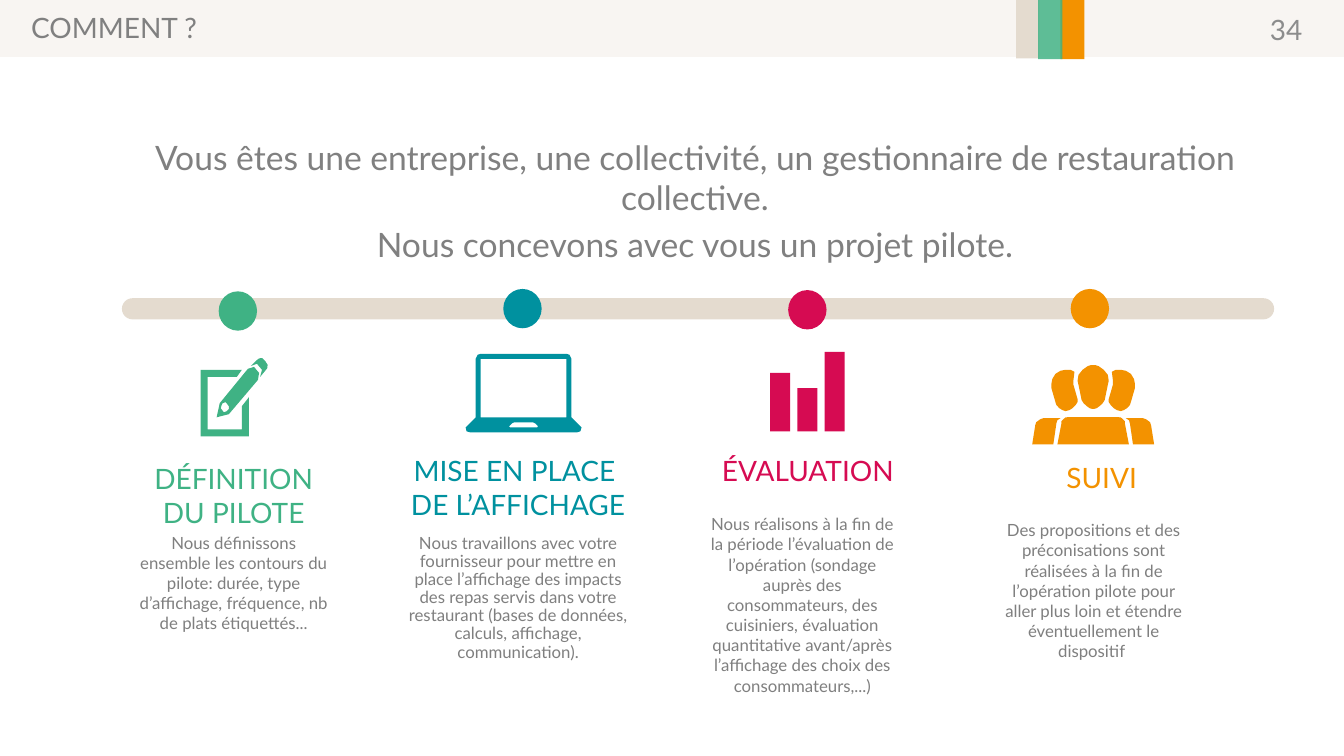
"""Builds the "Comment ?" slide: a four-step pilot project timeline."""
from lxml import etree
from pptx import Presentation
from pptx.dml.color import RGBColor
from pptx.enum.shapes import MSO_SHAPE as SHAPE
from pptx.enum.text import MSO_ANCHOR as ANCHOR, PP_ALIGN as ALIGN
from pptx.oxml.ns import qn
from pptx.util import Pt

GREEN, TEAL, PINK, ORANGE = "3FB284", "00919F", "D60B52", "F39200"
BEIGE, GREY, BODY_GREY = "E4DBCF", "808080", "7F7F7F"


def paint(sp, color, opacity=100):
    sp.shadow.inherit = False
    sp.fill.solid()
    sp.fill.fore_color.rgb = RGBColor.from_string(color)
    sp.line.fill.background()
    if opacity < 100:
        clr = sp.fill._xPr.find(qn("a:solidFill"))[0]
        etree.SubElement(clr, qn("a:alpha"), val=str(opacity * 1000))


def add_text(box, paragraphs, align=ALIGN.CENTER, anchor=ANCHOR.TOP):
    tf = slide.shapes.add_textbox(*map(Pt, box)).text_frame
    tf.word_wrap = True
    tf.vertical_anchor = anchor
    for i, (text, size, color, before, spacing) in enumerate(paragraphs):
        p = tf.add_paragraph() if i else tf.paragraphs[0]
        p.alignment = align
        p.space_before = Pt(before)
        p.line_spacing = spacing
        r = p.add_run()
        r.text = text
        r.font.name = "Lato"
        r.font.size = Pt(size)
        r.font.color.rgb = RGBColor.from_string(color)


prs = Presentation()
prs.slide_width, prs.slide_height = Pt(960), Pt(540)
slide = prs.slides.add_slide(prs.slide_layouts[6])

bands = [
    ((0, -1.4, 960, 42), BEIGE, 26),
    ((725.8, 0, 16.6, 41.8), BEIGE, 100),
    ((757.4, -0.7, 17.3, 43), ORANGE, 100),
    ((741.6, -0.7, 17.3, 43), GREEN, 83),
]
for box, color, opacity in bands:
    sp = slide.shapes.add_shape(SHAPE.RECTANGLE, *map(Pt, box))
    paint(sp, color, opacity)

add_text((15.1, 6.5, 355.7, 28.8), [("COMMENT ?", 20, GREY, 0, 0.9)], ALIGN.LEFT)
add_text((878.4, 6.5, 59, 28.8), [("34", 20, "8C8C8C", 0, 1.0)],
         ALIGN.RIGHT, ANCHOR.MIDDLE)
add_text((91.4, 94.3, 810, 45.4), [
    ("Vous êtes une entreprise, une collectivité, un gestionnaire de "
     "restauration collective.", 24, GREY, 0, 1.0),
    ("Nous concevons avec vous un projet pilote.", 24, GREY, 4.8, 1.0),
])

track = slide.shapes.add_shape(
    SHAPE.ROUNDED_RECTANGLE, Pt(87.1), Pt(213), Pt(823), Pt(15.1))
track.adjustments[0] = 0.5
paint(track, BEIGE)

dots = [(156.2, 208.1, GREEN), (359.5, 206.4, TEAL),
        (563, 207.2, PINK), (764.8, 206.4, ORANGE)]
for x, y, color in dots:
    dot = slide.shapes.add_shape(SHAPE.OVAL, Pt(x), Pt(y), Pt(27.4), Pt(28.1))
    paint(dot, color)

notepad = [
    [(5, 51.1), (29.5, 51.1), (29.5, 34.6), (34.6, 28.1), (34.6, 56.2),
     (0, 56.2), (0, 8.6), (29.5, 8.6), (25.9, 13.7), (5, 13.7)],
    [(38.2, 6.5), (41.8, 10.8), (41, 15.8), (20.2, 40.3), (11.5, 42.5),
     (13.7, 32.4), (33.8, 7.9)],
    [(18, 31.7), (15.8, 32.4), (15.1, 33.8), (14.4, 36), (16.6, 38.9),
     (18.7, 38.2), (20.2, 36.7), (20.2, 34.6)],
    [(46.1, 9.4), (42.5, 13.7), (43.9, 8.6), (40.3, 4.3), (36, 5.8),
     (39.6, 2.2), (41.8, 0.4), (44, 0.2), (46.1, 2.2), (47.9, 5), (47.6, 7.5)],
]
laptop = [
    [(7.2, 45.4), (7.2, 3.6), (8.6, 0.7), (10.8, 0), (72, 0), (74.2, 0.7),
     (75.6, 3.6), (75.6, 45.4), (82.8, 52.6), (82, 55.4), (79.2, 56.2),
     (3.6, 56.2), (0.7, 55.4), (0, 52.6)],
    [(10.8, 45.4), (72, 45.4), (72, 3.6), (10.8, 3.6)],
    [(31, 51.8), (31.7, 52.6), (51.1, 52.6), (51.8, 51.8), (49.7, 49.7),
     (48.2, 49), (34.6, 49), (33.1, 49.7)],
]
bars = [[(x, 56.9), (x, top), (x + 14.2, top), (x + 14.2, 56.9)]
        for x, top in [(0, 15.1), (19.5, 25.9), (39, 0)]]

side_person = [
    [(0, 56.9), (2.2, 43.2), (2.9, 41), (5.8, 38.9), (7.9, 38.2),
     (20.2, 38.2), (18, 39.6), (17.3, 41.8), (15.1, 56.9)],
    [(29.5, 14.4), (32.4, 24.5), (32.4, 26.6), (31, 28.8), (28.8, 31),
     (26.6, 32.4), (23.8, 33.1), (21.6, 32.4), (19.4, 31), (17.3, 28.8),
     (16.6, 26.6), (13.7, 16.6), (13.7, 13.7), (14.4, 10.1), (16.6, 6.5),
     (20.2, 4.3), (23.8, 3.6), (27.4, 3.6), (30.2, 5), (29.5, 10.8)],
]
middle_half = [
    [(18, 56.9), (20.9, 41.8), (20.9, 40.3), (22.3, 38.9), (23.8, 37.6),
     (25.9, 37.4)],
    [(42, 0.2), (39.6, 1), (36, 3.6), (33.1, 7.2), (32.4, 11.5), (33.1, 14.4),
     (35.3, 25.2), (36.7, 27.4), (38.9, 29.5), (41, 31), (43, 31.6)],
]
people = list(side_person)
for half in side_person + middle_half:
    mirrored = [(87.1 - x, y) for x, y in reversed(half)]
    people.append(half + mirrored if half in middle_half else mirrored)

icons = [(143.3, 255.6, GREEN, notepad), (332.6, 252.7, TEAL, laptop),
         (550.1, 251.3, PINK, bars), (737.3, 260.6, ORANGE, people)]
for left, top, color, outlines in icons:
    builder = None
    for outline in outlines:
        start, *rest = [(Pt(x), Pt(y)) for x, y in outline]
        if builder is None:
            builder = slide.shapes.build_freeform(*start)
        else:
            builder.move_to(*start)
        builder.add_line_segments(rest, close=True)
    paint(builder.convert_to_shape(Pt(left), Pt(top)), color)

steps = [
    ((91.4, 326.2, 151.2, 115.2), [
        ("DÉFINITION DU PILOTE", 20, GREEN, 0, 1.0),
        ("Nous définissons ensemble les contours du pilote: durée, type "
         "d’affichage, fréquence, nb de plats étiquettés...",
         12, BODY_GREY, 2.4, 1.0)]),
    ((280.8, 320.4, 178.6, 57.6), [
        ("MISE EN PLACE ", 20, TEAL, 0, 1.0),
        ("DE L’AFFICHAGE", 20, TEAL, 0, 1.0),
        ("Nous travaillons avec votre fournisseur pour mettre en place "
         "l’affichage des impacts des repas servis dans votre restaurant "
         "(bases de données, calculs, affichage, communication).",
         12, BODY_GREY, 10, 0.9)]),
    ((440.6, 320.4, 272.9, 51.8), [("ÉVALUATION", 20, PINK, 0, 1.0)]),
    ((499, 363.6, 148.3, 123.8), [
        ("Nous réalisons à la fin de la période l’évaluation de l’opération "
         "(sondage auprès des consommateurs, des cuisiniers, évaluation "
         "quantitative avant/après l’affichage des choix des "
         "consommateurs,...)", 12, BODY_GREY, 0, 1.0)]),
    ((684.7, 325.4, 204.5, 68.4), [("SUIVI", 20, ORANGE, 0, 1.0)]),
    ((707.8, 367.9, 146.9, 94.3), [
        ("Des propositions et des préconisations sont réalisées à la fin de "
         "l’opération pilote pour aller plus loin et étendre éventuellement "
         "le dispositif ", 12, BODY_GREY, 0, 1.0)]),
]
for box, paragraphs in steps:
    add_text(box, paragraphs)

prs.save("out.pptx")
